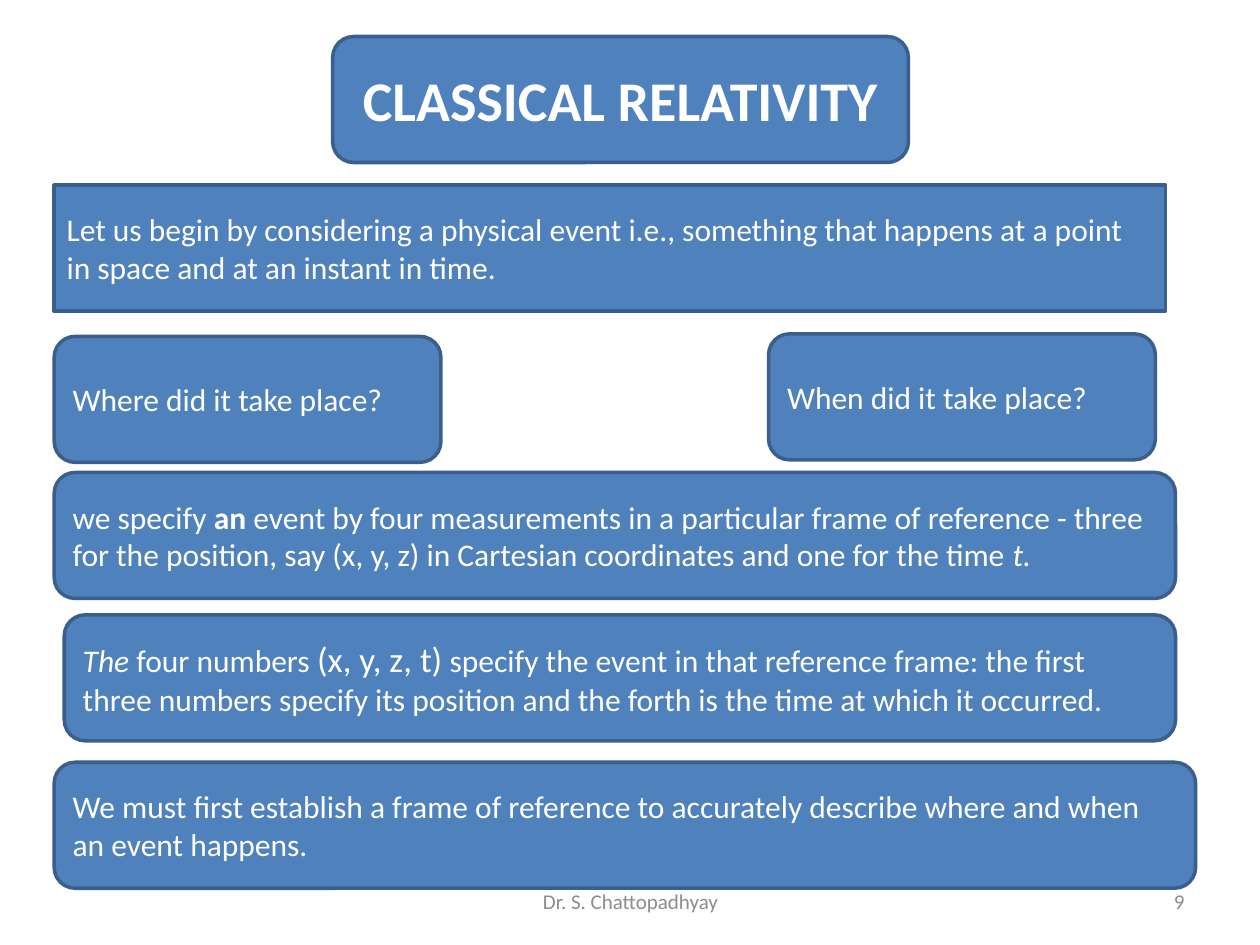
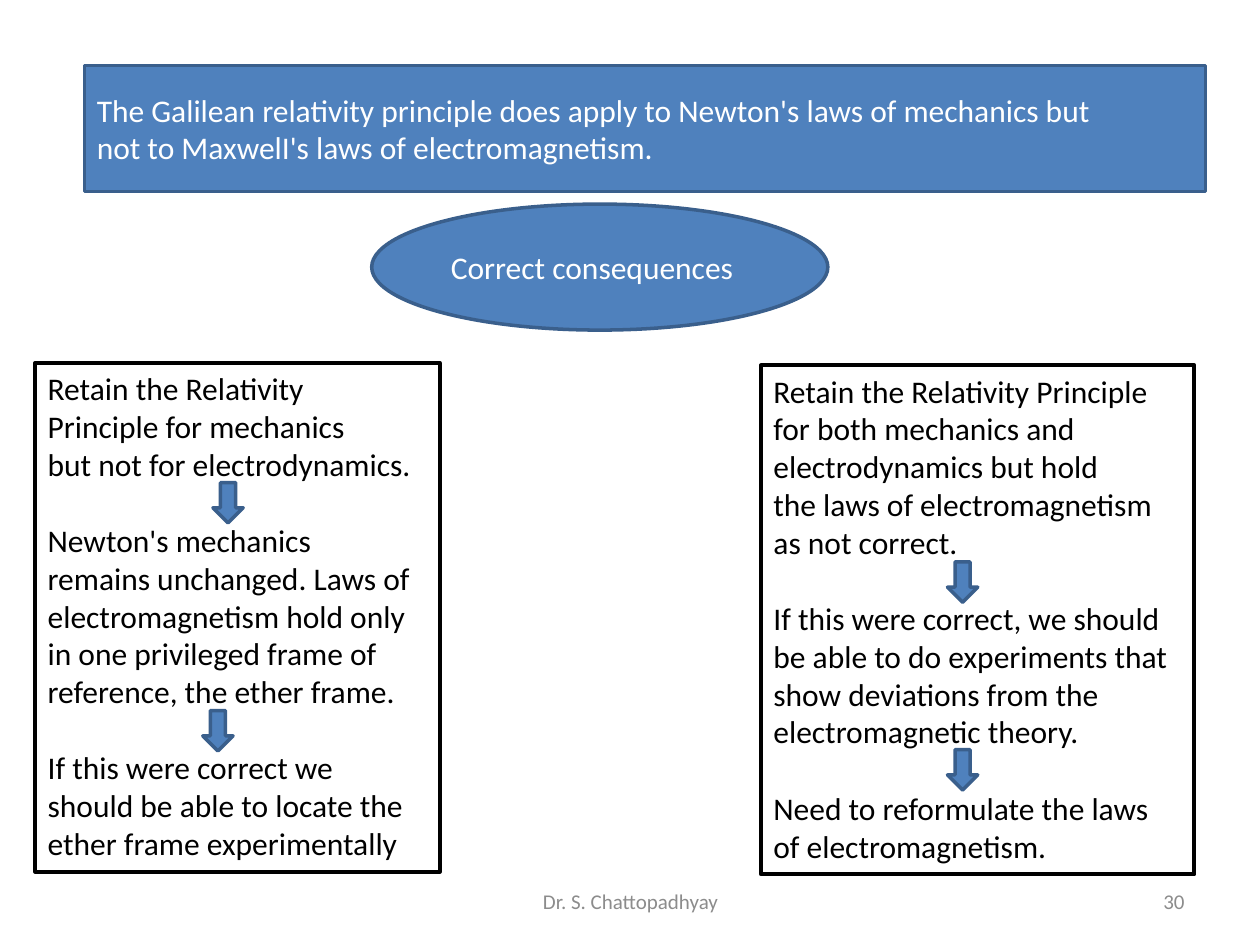
"""Builds two lecture slides on classical relativity and its consequences."""
from dataclasses import dataclass

import pptx
import pptx.dml.color
import pptx.enum.shapes
import pptx.enum.text
import pptx.util

Inches = pptx.util.Inches
Shape = pptx.enum.shapes.MSO_SHAPE
Align = pptx.enum.text.PP_ALIGN
Anchor = pptx.enum.text.MSO_ANCHOR


@dataclass(frozen=True)
class Theme:
    font: str = "Calibri"
    blue: str = "4F81BD"
    edge: str = "3A5F8C"
    white: str = "FFFFFF"
    black: str = "000000"
    gray: str = "8C8C8C"
    title: int = 32
    large: int = 20
    body: int = 18
    small: int = 12
    edge_width: float = 2
    frame_width: float = 2.25
    step_gap: int = 22
    box_height: float = 1


class Deck:
    def __init__(self, theme):
        self.theme = theme
        self.deck = pptx.Presentation()
        self.deck.slide_width, self.deck.slide_height = Inches(10), Inches(7.5)
        self.slide = None

    def new_slide(self, number):
        self.slide = self.deck.slides.add_slide(self.deck.slide_layouts[6])
        self.footer(3.42, 3.17, "Dr. S. Chattopadhyay", Align.CENTER)
        self.footer(7.17, 2.33, str(number), Align.RIGHT)

    def footer(self, left, width, words, align):
        area = self.slide.shapes.add_textbox(Inches(left), Inches(6.95), Inches(width), Inches(0.4))
        self.set_text(area, [words], self.theme.gray, self.theme.small, align)

    def shape(self, kind, left, top, width, height, fill, edge, edge_width):
        item = self.slide.shapes.add_shape(
            kind, Inches(left), Inches(top), Inches(width), Inches(height))
        item.shadow.inherit = False
        if fill:
            item.fill.solid()
            item.fill.fore_color.rgb = pptx.dml.color.RGBColor.from_string(fill)
        else:
            item.fill.background()
        item.line.color.rgb = pptx.dml.color.RGBColor.from_string(edge)
        item.line.width = pptx.util.Pt(edge_width)
        return item

    def box(self, left, top, width, lines, kind=Shape.ROUNDED_RECTANGLE, size=None, align=Align.LEFT, **font):
        theme = self.theme
        item = self.shape(kind, left, top, width, theme.box_height,
                          theme.blue, theme.edge, theme.edge_width)
        self.set_text(item, lines, theme.white, size or theme.body, align, **font)

    def column(self, left, top, width, steps, align):
        theme = self.theme
        frame = self.shape(Shape.RECTANGLE, left, top, width, 4.04,
                           None, theme.black, theme.frame_width)
        lines = [line for step in steps for line in step]
        self.set_text(frame, lines, theme.black, theme.body, align, Anchor.TOP)
        start = 0
        for step in steps[:-1]:
            start += len(step)
            frame.text_frame.paragraphs[start].space_before = pptx.util.Pt(theme.step_gap)

    def arrow(self, left, top):
        theme = self.theme
        self.shape(Shape.DOWN_ARROW, left, top, 0.24, 0.32,
                   theme.blue, theme.edge, theme.edge_width)

    def set_text(self, item, lines, color, size, align, anchor=Anchor.MIDDLE, **font):
        frame = item.text_frame
        frame.word_wrap = True
        frame.vertical_anchor = anchor
        for index, line in enumerate(lines):
            paragraph = frame.add_paragraph() if index else frame.paragraphs[0]
            paragraph.alignment = align
            for words, changes in [(line, {})] if isinstance(line, str) else line:
                run = paragraph.add_run()
                run.text = words
                run.font.color.rgb = pptx.dml.color.RGBColor.from_string(color)
                values = {"name": self.theme.font, "size": size, **font, **changes}
                values["size"] = pptx.util.Pt(values["size"])
                for name, value in values.items():
                    setattr(run.font, name, value)


def relativity_slide(deck):
    deck.new_slide(9)
    deck.box(2.64, 0.29, 4.57, ["CLASSICAL RELATIVITY"],
             size=deck.theme.title, align=Align.CENTER, bold=True)
    deck.box(0.43, 1.47, 8.82, [
        "Let us begin by considering a physical event i.e., something that happens "
        "at a point in space and at an instant in time."], Shape.RECTANGLE)
    deck.box(0.43, 2.67, 3.07, ["Where did it take place?"])
    deck.box(6.1, 2.65, 3.07, ["When did it take place?"])
    deck.box(0.43, 3.75, 8.9, [[
        ("we specify ", {}),
        ("an ", {"bold": True}),
        ("event by four measurements in a particular frame of reference - three for "
         "the position, say (x, y, z) in Cartesian coordinates and one for the time ", {}),
        ("t.", {"italic": True})]])
    deck.box(0.51, 4.88, 8.82, [[
        ("The ", {"italic": True}),
        ("four numbers ", {}),
        ("(x, y, z, t)", {"size": deck.theme.large}),
        (" ", {"bold": True}),
        ("specify the event in that reference frame: the first three numbers specify "
         "its position and the forth is the time at which it occurred.", {})]])
    deck.box(0.43, 6.05, 9.06, [
        "We must first establish a frame of reference to accurately describe where and when",
        "an event happens."])


def consequences_slide(deck):
    deck.new_slide(30)
    deck.box(0.67, 0.52, 8.9, [
        "The Galilean relativity principle does apply to Newton's laws of mechanics but",
        "not to MaxwelI's laws of electromagnetism."], Shape.RECTANGLE)
    deck.box(2.95, 1.62, 3.62, ["Correct consequences"], Shape.OVAL)
    deck.column(0.28, 2.88, 3.21, [
        ["Retain the Relativity", "Principle for mechanics", "but not for electrodynamics."],
        ["Newton's mechanics", "remains unchanged. Laws of", "electromagnetism hold only",
         "in one privileged frame of", "reference, the ether frame."],
        ["If this were correct we", "should be able to locate the", "ether frame experimentally"],
    ], Align.JUSTIFY)
    deck.column(6.04, 2.9, 3.44, [
        ["Retain the Relativity Principle", "for both mechanics and", "electrodynamics but hold",
         "the laws of electromagnetism", "as not correct."],
        ["If this were correct, we should", "be able to do experiments that",
         "show deviations from the", "electromagnetic theory."],
        ["Need to reformulate the laws", "of electromagnetism."],
    ], Align.LEFT)
    for left, top in [(1.69, 3.83), (1.61, 5.64), (7.52, 4.46), (7.52, 5.95)]:
        deck.arrow(left, top)


def main():
    deck = Deck(Theme())
    relativity_slide(deck)
    consequences_slide(deck)
    deck.deck.save("out.pptx")


if __name__ == "__main__":
    main()
